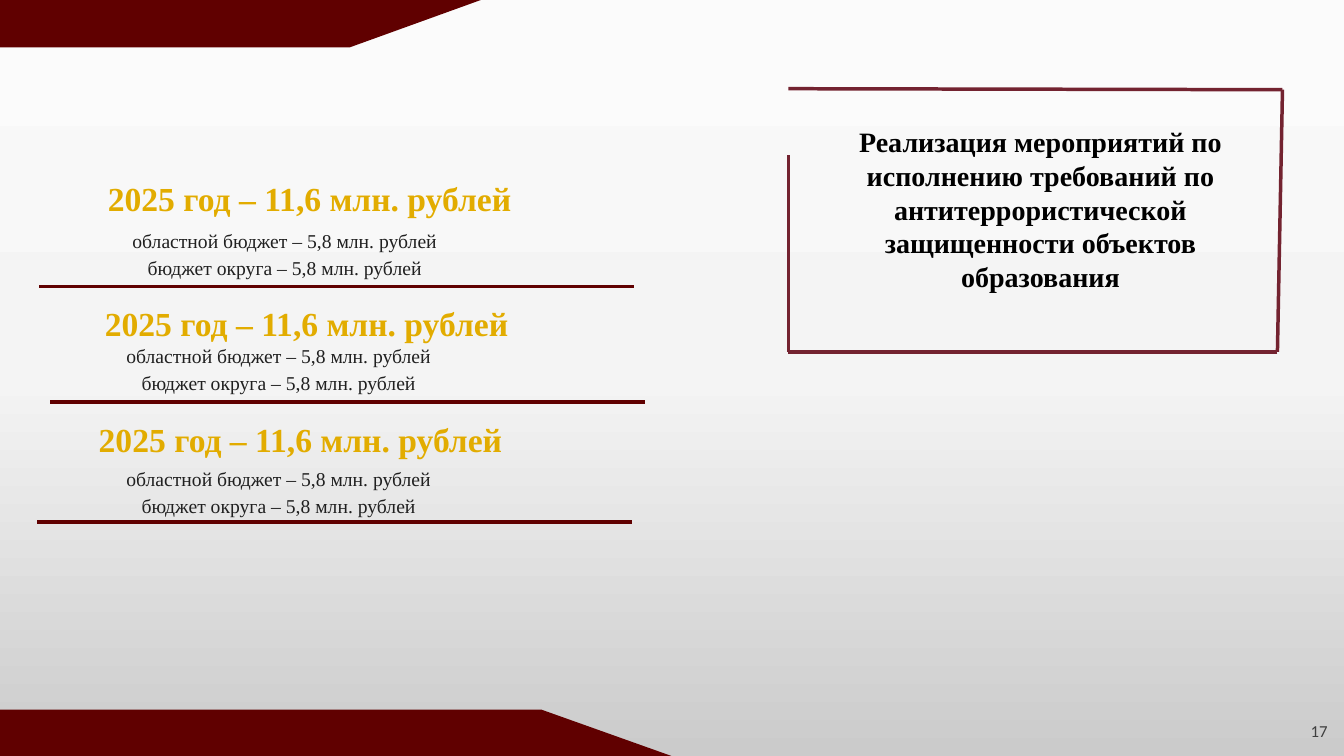
"""Build the slide on school security funding by year."""
from copy import deepcopy

from lxml import etree
from pptx import Presentation
from pptx.dml.color import RGBColor
from pptx.enum.shapes import MSO_CONNECTOR
from pptx.enum.text import PP_ALIGN
from pptx.oxml.ns import qn
from pptx.util import Inches, Pt

STRAIGHT = MSO_CONNECTOR.STRAIGHT
LEFT, CENTER = PP_ALIGN.LEFT, PP_ALIGN.CENTER

MAROON = RGBColor(0x60, 0x00, 0x00)
WINE = RGBColor(0x73, 0x23, 0x30)
GOLD = RGBColor(0xE2, 0xAC, 0x00)
BLACK = RGBColor(0x00, 0x00, 0x00)
DARK = RGBColor(0x20, 0x20, 0x20)
GREY = RGBColor(0x3F, 0x3F, 0x3F)
BACKDROP = [(0, RGBColor(0xFB, 0xFB, 0xFB)),
            (0.5, RGBColor(0xF4, 0xF4, 0xF4)),
            (1, RGBColor(0xCB, 0xCB, 0xCB))]

SERIF, SANS = "Times New Roman", "Calibri"
CELL = Inches(0.1)
COLS, ROWS = 133.3, 75
BAND = 4.7
HEADING_W, DETAIL_W, RULE_W = 59, 33.3, 59

TITLE = ("Реализация мероприятий по исполнению требований по "
         "антитеррористической защищенности объектов образования")
HEADING = "2025 год – 11,6 млн. рублей"
DETAILS = ["областной бюджет – 5,8 млн. рублей",
           "бюджет округа – 5,8 млн. рублей"]
YEARS = [
    {"heading": (30.7, 15.2), "detail": (11.6, 21.9), "rule": (3.9, 28.4)},
    {"heading": (30.4, 27.6), "detail": (11, 33.3), "rule": (5, 39.9)},
    {"heading": (29.8, 39.1), "detail": (11, 45.5), "rule": (3.7, 51.8)},
]
FRAME = [((78.2, 8.8), (127.2, 8.9)), ((127.2, 8.9), (126.7, 34.9)),
         ((126.7, 34.9), (78.2, 34.9)), ((78.2, 34.9), (78.2, 15.4))]


def cells(*counts):
    """Turn counts of grid cells into lengths."""
    return [round(n * CELL) for n in counts]


def paint_background(s):
    """Fill the slide with the vertical gradient."""
    fill = s.background.fill
    fill.gradient()
    fill.gradient_angle = 270
    stops = s.element.find(".//" + qn("a:gsLst"))
    stops.insert(1, deepcopy(stops[0]))
    for stop, (position, color) in zip(fill.gradient_stops, BACKDROP):
        stop.position = position
        stop.color.rgb = color


def add_band(s, points):
    """Draw a filled corner band through the grid points."""
    start, *rest = [cells(*point) for point in points]
    builder = s.shapes.build_freeform(*start)
    builder.add_line_segments(rest, close=True)
    sp = builder.convert_to_shape()
    sp.shadow.inherit = False
    sp.fill.solid()
    sp.fill.fore_color.rgb = MAROON
    sp.line.fill.background()


def add_line(s, start, end, color):
    """Draw a straight line between two grid points."""
    line = s.shapes.add_connector(STRAIGHT, *cells(*start, *end))
    line.line.color.rgb = color
    line.line.width = Pt(2.5)
    etree.SubElement(line.element.spPr, qn("a:effectLst"))


def add_text(s, box, lines, size, color, font=SERIF, bold=False,
             align=CENTER, spacing=1.0):
    """Write one paragraph per line in a wrapped text box."""
    tf = s.shapes.add_textbox(*cells(*box)).text_frame
    tf.word_wrap = True
    for i, text in enumerate(lines):
        p = tf.paragraphs[0] if i == 0 else tf.add_paragraph()
        p.alignment = align
        p.line_spacing = spacing
        r = p.add_run()
        r.text = text
        r.font.name = font
        r.font.size = Pt(size)
        r.font.bold = bold
        r.font.color.rgb = color


def add_year(s, heading, detail, rule):
    """Add one year's total, its two sources and the rule below."""
    middle, top = heading
    add_line(s, rule, (rule[0] + RULE_W, rule[1]), MAROON)
    add_text(s, (middle - HEADING_W / 2, top, HEADING_W, 6.3), [HEADING],
             24, GOLD, bold=True, spacing=1.5)
    add_text(s, (*detail, DETAIL_W, 6.2), DETAILS, 14, DARK, spacing=1.15)


def main():
    """Build and save the slide."""
    prs = Presentation()
    prs.slide_width, prs.slide_height = cells(COLS, ROWS)
    s = prs.slides.add_slide(prs.slide_layouts[6])
    paint_background(s)
    add_band(s, [(0, 0), (47.7, 0), (34.7, BAND), (0, BAND)])
    add_band(s, [(0, ROWS - BAND + 0.1), (53.7, ROWS - BAND + 0.1),
                 (66.6, ROWS), (0, ROWS)])
    for start, end in FRAME:
        add_line(s, start, end, WINE)
    add_text(s, (79, 11.9, 48.4, 17.8), [TITLE], 20, BLACK, bold=True)
    for year in YEARS:
        add_year(s, **year)
    add_text(s, (129, 71.2, 3.9, 3.7), ["17"], 12, GREY, font=SANS,
             align=LEFT, spacing=0.9)
    prs.save("out.pptx")


if __name__ == "__main__":
    main()
